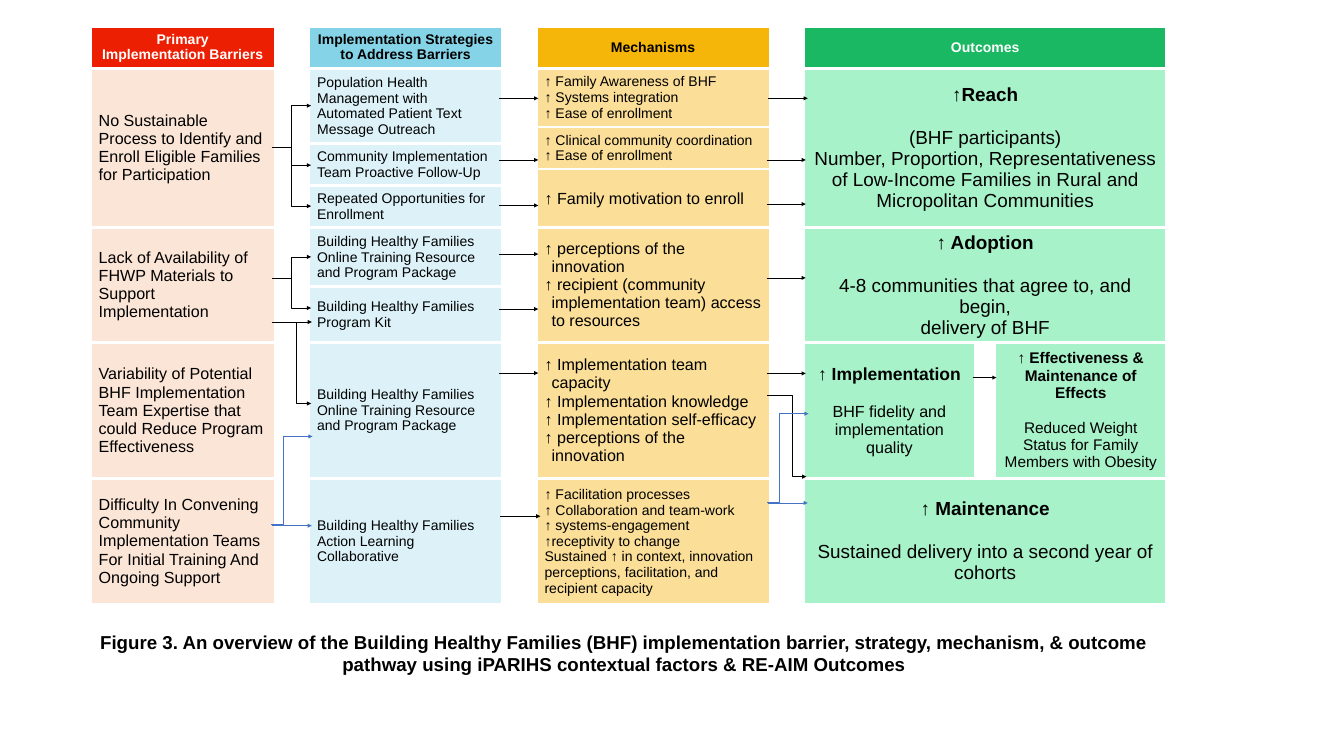
"""Builds the Building Healthy Families barrier-to-outcome pathway slide."""
from lxml import etree
from pptx import Presentation
from pptx.dml.color import RGBColor
from pptx.enum.shapes import MSO_CONNECTOR
from pptx.enum.text import MSO_ANCHOR, PP_ALIGN
from pptx.oxml.ns import qn
from pptx.util import Pt

STRAIGHT, ELBOW = MSO_CONNECTOR.STRAIGHT, MSO_CONNECTOR.ELBOW
MIDDLE = MSO_ANCHOR.MIDDLE
LEFT, CENTER = PP_ALIGN.LEFT, PP_ALIGN.CENTER
FONT = "Arial"
COLORS = {
    "white": "FFFFFF", "black": "000000", "blue": "4472C4",
    "red": "ED1F02", "sky": "85D3E7", "gold": "F6B509", "green": "1AB862",
    "barrier": "FBE5D6", "strategy": "DCF2F8", "mechanism": "FBDE97", "outcome": "A8F2C9",
}


def add_text(p, text, size, color="black", bold=False):
    r = p.add_run()
    r.text = text
    r.font.name, r.font.size, r.font.bold = FONT, Pt(size), bold
    r.font.color.rgb = RGBColor.from_string(COLORS[color])


def add_arrow(x1, y1, x2, y2, color="black", bend=None):
    kind = STRAIGHT if bend is None else ELBOW
    c = s.shapes.add_connector(kind, Pt(x1), Pt(y1), Pt(x2), Pt(y2))
    c.line.width = Pt(1)
    c.line.color.rgb = RGBColor.from_string(COLORS[color])
    etree.SubElement(c.line._get_or_add_ln(), qn("a:tailEnd"), type="triangle")
    sp_pr = c._element.spPr
    etree.SubElement(sp_pr, qn("a:effectLst"))
    if bend is not None:
        guides = sp_pr.find(qn("a:prstGeom")).get_or_add_avLst()
        etree.SubElement(guides, qn("a:gd"), name="adj1", fmla=f"val {round(bend * 100000)}")


prs = Presentation()
prs.slide_width, prs.slide_height = Pt(1920), Pt(1080)
s = prs.slides.add_slide(prs.slide_layouts[6])

widths = [264, 48, 277, 48, 334, 48, 245.5, 27.5, 246]
heights = [60, 84, 24, 36, 24, 60, 84, 68, 194, 180]
frame = s.shapes.add_table(len(heights), len(widths), Pt(129), Pt(37.5), Pt(sum(widths)), Pt(sum(heights)))
table = frame.table
table.first_row = table.horz_banding = False
for column, width in zip(table.columns, widths):
    column.width = Pt(width)
for row, height in zip(table.rows, heights):
    row.height = Pt(height)

for cell in table.iter_cells():
    tc_pr = cell._tc.get_or_add_tcPr()
    for side in ("a:lnL", "a:lnR", "a:lnT", "a:lnB"):
        ln = etree.SubElement(tc_pr, qn(side), w=str(Pt(4.5)))
        line_fill = etree.SubElement(ln, qn("a:solidFill"))
        etree.SubElement(line_fill, qn("a:srgbClr"), val=COLORS["white"])
    cell.fill.solid()
    cell.fill.fore_color.rgb = RGBColor.from_string(COLORS["white"])

for row, col, span in [(1, 1, 2), (3, 1, 2), (1, 3, 5), (6, 3, 2), (1, 5, 5), (6, 5, 2)]:
    table.cell(row, col).merge(table.cell(row + span - 1, col))

headers = [
    (0, 1, "red", "white", ["Primary", "Implementation Barriers"]),
    (2, 1, "sky", "black", ["Implementation Strategies to Address Barriers"]),
    (4, 1, "gold", "black", ["Mechanisms"]),
    (6, 3, "green", "white", ["Outcomes"]),
]
body = [
    (1, 0, 5, 23, ["No Sustainable Process to Identify and Enroll Eligible Families for Participation"]),
    (6, 0, 2, 23, ["Lack of Availability of FHWP Materials to Support Implementation"]),
    (8, 0, 1, 23, ["Variability of Potential BHF Implementation Team Expertise that could Reduce Program Effectiveness"]),
    (9, 0, 1, 23, ["Difficulty In Convening Community Implementation Teams For Initial Training And Ongoing Support"]),
    (1, 2, 2, 20, ["Population Health Management with Automated Patient Text Message Outreach"]),
    (3, 2, 2, 20, ["Community Implementation Team Proactive Follow-Up"]),
    (5, 2, 1, 20, ["Repeated Opportunities for Enrollment"]),
    (6, 2, 1, 20, ["Building Healthy Families Online Training Resource and Program Package"]),
    (7, 2, 1, 20, ["Building Healthy Families Program Kit"]),
    (8, 2, 1, 20, ["Building Healthy Families Online Training Resource and Program Package"]),
    (9, 2, 1, 20, ["Building Healthy Families Action Learning Collaborative"]),
    (1, 4, 1, 20, ["↑ Family Awareness of BHF", "↑ Systems integration", "↑ Ease of enrollment"]),
    (2, 4, 2, 20, ["↑ Clinical community coordination", "↑ Ease of enrollment"]),
    (4, 4, 2, 23, ["↑ Family motivation to enroll"]),
    (6, 4, 2, 23, ["↑ perceptions of the innovation",
                   "↑ recipient (community implementation team) access to resources"]),
    (8, 4, 1, 23, ["↑ Implementation team capacity", "↑ Implementation knowledge",
                   "↑ Implementation self-efficacy", "↑ perceptions of the innovation"]),
    (9, 4, 1, 20, ["↑ Facilitation processes", "↑ Collaboration and team-work", "↑ systems-engagement",
                   "↑receptivity to change",
                   "Sustained ↑ in context, innovation perceptions, facilitation, and recipient capacity"]),
]
outcomes = [
    (1, 6, 5, 3, 27, 27, ["↑Reach", "(BHF participants)",
                          "Number, Proportion, Representativeness of Low-Income Families in Rural and "
                          "Micropolitan Communities"]),
    (6, 6, 2, 3, 27, 27, ["↑ Adoption", "4-8 communities that agree to, and begin,", "delivery of BHF"]),
    (8, 6, 1, 1, 25, 23, ["↑ Implementation", "BHF fidelity and implementation quality"]),
    (8, 8, 1, 1, 22, 22, ["↑ Effectiveness & Maintenance of Effects",
                          "Reduced Weight Status for Family Members with Obesity"]),
    (9, 6, 1, 3, 27, 27, ["↑ Maintenance", "Sustained delivery into a second year of cohorts"]),
]
fills = {0: "barrier", 2: "strategy", 4: "mechanism"}
cells = [(0, col, 1, span, fill, color, 20, 20, lines) for col, span, fill, color, lines in headers]
cells += [(row, col, span, 1, fills[col], "black", size, size, lines) for row, col, span, size, lines in body]
cells += [(row, col, rows, cols, "outcome", "black", title_size, size, lines)
          for row, col, rows, cols, title_size, size, lines in outcomes]

for row, col, rows, cols, fill, color, title_size, size, lines in cells:
    cell = table.cell(row, col)
    if rows * cols > 1:
        cell.merge(table.cell(row + rows - 1, col + cols - 1))
    cell.fill.fore_color.rgb = RGBColor.from_string(COLORS[fill])
    cell.vertical_anchor = MIDDLE
    cell.margin_left = cell.margin_right = Pt(12)
    cell.margin_top = cell.margin_bottom = Pt(6)
    tf = cell.text_frame
    is_header, is_outcome = row == 0, fill == "outcome"
    for i, line in enumerate(lines):
        p = tf.paragraphs[0] if i == 0 else tf.add_paragraph()
        p.alignment = CENTER if is_header or is_outcome else LEFT
        if fill == "mechanism" and size == 23 and len(lines) > 1:
            p_pr = p._p.get_or_add_pPr()
            p_pr.set("marL", str(Pt(10)))
            p_pr.set("indent", str(-Pt(10)))
        if is_outcome and i == 1:
            p.space_before = Pt(size * 1.15)
        add_text(p, line, title_size if i == 0 else size, color, is_header or (is_outcome and i == 0))

for y1, y2, bend in [(211, 151, 0.5), (211, 236, 0.5), (211, 294.5, 0.5),
                     (397.5, 367, 0.5), (397.5, 440, 0.5), (460.5, 576.5, 0.63)]:
    add_arrow(388.5, y1, 444.5, y2, bend=bend)
add_arrow(388, 460, 445.5, 460)
add_arrow(388, 751, 445.5, 751, "blue")
add_arrow(387.5, 749.5, 446.5, 623.5, "blue", 0.3)

for y in [140.5, 228.5, 293.5, 363, 441.5, 533]:
    add_arrow(713, y, 769, y)
add_arrow(715, 737.5, 772, 737.5)

add_arrow(1097.5, 140.5, 1154, 140.5)
for y in [228.5, 291.5, 397, 533.5]:
    add_arrow(1095, y, 1151, y)
add_arrow(1096, 565, 1152, 681, bend=0.63)
add_arrow(1096.5, 718.5, 1154, 718.5, "blue")
add_arrow(1095, 717, 1155, 591, "blue", 0.3)
add_arrow(1389.5, 539.5, 1423.5, 539.5)

caption = s.shapes.add_textbox(Pt(117.5), Pt(897), Pt(1548.5), Pt(72))
tf = caption.text_frame
tf.word_wrap = True
p = tf.paragraphs[0]
p.alignment = CENTER
add_text(p, "Figure 3. An overview of the Building Healthy Families (BHF) implementation barrier, strategy, "
            "mechanism, & outcome pathway using iPARIHS contextual factors & RE-AIM Outcomes", 26.7, bold=True)

prs.save("out.pptx")
